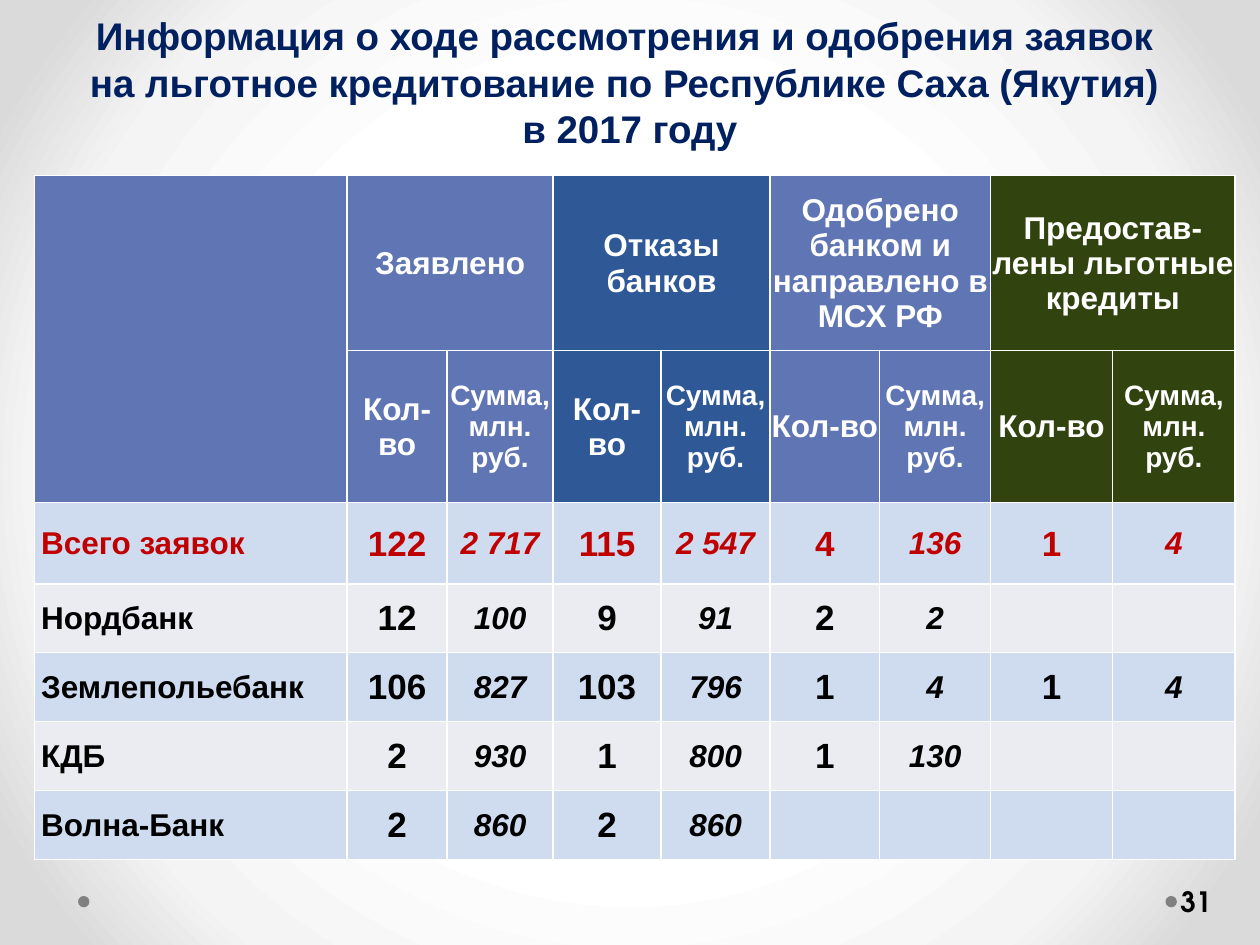
"""Build the slide on the progress of subsidised loan applications."""
from dataclasses import dataclass

from lxml import etree
from pptx import Presentation
from pptx.dml.color import RGBColor
from pptx.enum.shapes import MSO_SHAPE
from pptx.enum.text import MSO_ANCHOR, PP_ALIGN
from pptx.oxml import parse_xml
from pptx.oxml.ns import nsdecls, qn
from pptx.util import Pt

ELLIPSE = MSO_SHAPE.OVAL
TOP, MIDDLE = MSO_ANCHOR.TOP, MSO_ANCHOR.MIDDLE
LEFT, CENTER = PP_ALIGN.LEFT, PP_ALIGN.CENTER


@dataclass(frozen=True)
class Theme:
    """Colours, fonts and type sizes of the slide."""
    white: str = "FFFFFF"
    black: str = "000000"
    title: str = "002060"
    total: str = "C00000"
    dot: str = "808080"
    header: str = "6076B4"
    refused: str = "2F5897"
    granted: str = "314410"
    bands: tuple = ("CFDCF0", "EAECF2")
    backdrop: tuple = ((50, "FFFFFF"), (76, "F4F4F4"), (92, "DADADA"))
    body_font: str = "Arial"
    number_font: str = "TeX Gyre Adventor"
    title_size: int = 22
    count_size: int = 20
    body_size: int = 18
    small_size: int = 16


THEME = Theme()
COLUMN_WIDTHS = [178.6, 57.1, 60.5, 61.8, 62.3, 62.6, 63.4, 69.8, 70]
ROW_HEIGHTS = [100, 87, 46.6, 39, 39.5, 39.5, 39.5]
GROUPS = [
    ("Заявлено", THEME.header),
    ("Отказы банков", THEME.refused),
    ("Одобрено банком и направлено в МСХ РФ", THEME.header),
    ("Предостав-лены льготные кредиты", THEME.granted),
]
APPLICATIONS = [
    ("Всего заявок", "122", "2 717", "115", "2 547", "4", "136", "1", "4"),
    ("Нордбанк", "12", "100", "9", "91", "2", "2", "", ""),
    ("Землепольебанк", "106", "827", "103", "796", "1", "4", "1", "4"),
    ("КДБ", "2", "930", "1", "800", "1", "130", "", ""),
    ("Волна-Банк", "2", "860", "2", "860", "", "", "", ""),
]


def apply(target, values):
    """Set every attribute named in a dict of format values."""
    for attribute, value in values.items():
        setattr(target, attribute, value)


class SlideBuilder:
    """Hold the theme and the current slide and add elements to it."""

    def __init__(self, slide, theme):
        self.slide, self.theme = slide, theme

    def backdrop(self):
        stops = "".join(
            f'<a:gs pos="{position * 1000}"><a:srgbClr val="{color}"/></a:gs>'
            for position, color in self.theme.backdrop)
        background = parse_xml(
            f'<p:bg {nsdecls("p", "a")}><p:bgPr><a:gradFill rotWithShape="1">'
            f'<a:gsLst>{stops}</a:gsLst><a:path path="circle">'
            '<a:fillToRect l="50000" t="50000" r="50000" b="50000"/></a:path>'
            '</a:gradFill><a:effectLst/></p:bgPr></p:bg>')
        self.slide.element.cSld.insert(0, background)

    def fill_line(self, paragraph, words, size, color, align=CENTER, italic=False, font=None):
        paragraph.alignment = align
        run = paragraph.add_run()
        run.text = words
        apply(run.font, {"name": font or self.theme.body_font, "size": Pt(size),
                         "bold": True, "italic": italic})
        run.font.color.rgb = RGBColor.from_string(color)

    def text(self, box, lines, margins, anchor=TOP, **style):
        frame = self.slide.shapes.add_textbox(*map(Pt, box)).text_frame
        left, top, right, bottom = map(Pt, margins)
        apply(frame, {"word_wrap": True, "vertical_anchor": anchor,
                      "margin_left": left, "margin_top": top,
                      "margin_right": right, "margin_bottom": bottom})
        for index, line in enumerate(lines):
            paragraph = frame.add_paragraph() if index else frame.paragraphs[0]
            self.fill_line(paragraph, line, **style)

    def dot(self, left, top, diameter):
        dot = self.slide.shapes.add_shape(ELLIPSE, *map(Pt, (left, top, diameter, diameter)))
        dot.shadow.inherit = False
        dot.fill.solid()
        dot.fill.fore_color.rgb = RGBColor.from_string(self.theme.dot)
        dot.line.fill.background()

    def table(self, left, top, widths, heights):
        box = map(Pt, (left, top, sum(widths), sum(heights)))
        table = self.slide.shapes.add_table(len(heights), len(widths), *box).table
        apply(table, {"first_row": False, "horz_banding": False})
        for column, width in zip(table.columns, widths):
            column.width = Pt(width)
        for row, height in zip(table.rows, heights):
            row.height = Pt(height)
        return table

    def cell(self, cell, fill, words="", indent=0, **style):
        apply(cell, {"vertical_anchor": MIDDLE, "margin_left": Pt(0.7 + indent),
                     "margin_top": Pt(0.7), "margin_right": Pt(0.7), "margin_bottom": 0})
        properties = cell._tc.get_or_add_tcPr()
        for side in ("a:lnL", "a:lnR", "a:lnT", "a:lnB"):
            border = etree.SubElement(properties, qn(side), w=str(Pt(1)))
            solid = etree.SubElement(border, qn("a:solidFill"))
            etree.SubElement(solid, qn("a:srgbClr"), val=self.theme.white)
        cell.fill.solid()
        cell.fill.fore_color.rgb = RGBColor.from_string(fill)
        if words:
            self.fill_line(cell.text_frame.paragraphs[0], words, **style)

    def header(self, table, groups):
        theme = self.theme
        for row in (0, 1):
            self.cell(table.cell(row, 0), theme.header)
        table.cell(0, 0).merge(table.cell(1, 0))
        for index, (group, fill) in enumerate(groups):
            count, amount = 2 * index + 1, 2 * index + 2
            self.cell(table.cell(0, count), fill, group,
                      size=theme.body_size, color=theme.white)
            self.cell(table.cell(0, amount), fill)
            table.cell(0, count).merge(table.cell(0, amount))
            self.cell(table.cell(1, count), fill, "Кол-во",
                      size=theme.body_size, color=theme.white)
            self.cell(table.cell(1, amount), fill, "Сумма, млн. руб.",
                      size=theme.small_size, color=theme.white)

    def body(self, table, records, first_row):
        theme = self.theme
        for index, (bank, *figures) in enumerate(records):
            row, fill = first_row + index, theme.bands[index % 2]
            color = theme.black if index else theme.total
            self.cell(table.cell(row, 0), fill, bank, indent=3,
                      size=theme.body_size, color=color, align=LEFT)
            for column, figure in enumerate(figures, 1):
                is_amount = column % 2 == 0
                size = theme.body_size if is_amount else theme.count_size
                self.cell(table.cell(row, column), fill, figure,
                          size=size, color=color, italic=is_amount)


def main():
    """Assemble the slide and save it."""
    deck = Presentation()
    apply(deck, {"slide_width": Pt(720), "slide_height": Pt(540)})
    builder = SlideBuilder(deck.slides.add_slide(deck.slide_layouts[6]), THEME)
    builder.backdrop()
    for left in (666, 44.6):
        builder.dot(left, 512, 6.5)
    builder.text((672.5, 500.4, 44, 28.8), ["31"], (2, 3.6, 3.6, 3.6), MIDDLE,
                 size=THEME.small_size, color=THEME.black, align=LEFT,
                 font=THEME.number_font)
    builder.text((0, 3.6, 720, 87),
                 ["Информация о ходе рассмотрения и одобрения заявок ",
                  "на льготное кредитование по Республике Саха (Якутия) ",
                  "в 2017 году"],
                 (7.2, 3.6, 7.2, 3.6), size=THEME.title_size, color=THEME.title)
    applications = builder.table(19.8, 100.2, COLUMN_WIDTHS, ROW_HEIGHTS)
    builder.header(applications, GROUPS)
    builder.body(applications, APPLICATIONS, first_row=2)
    deck.save("out.pptx")


if __name__ == "__main__":
    main()
